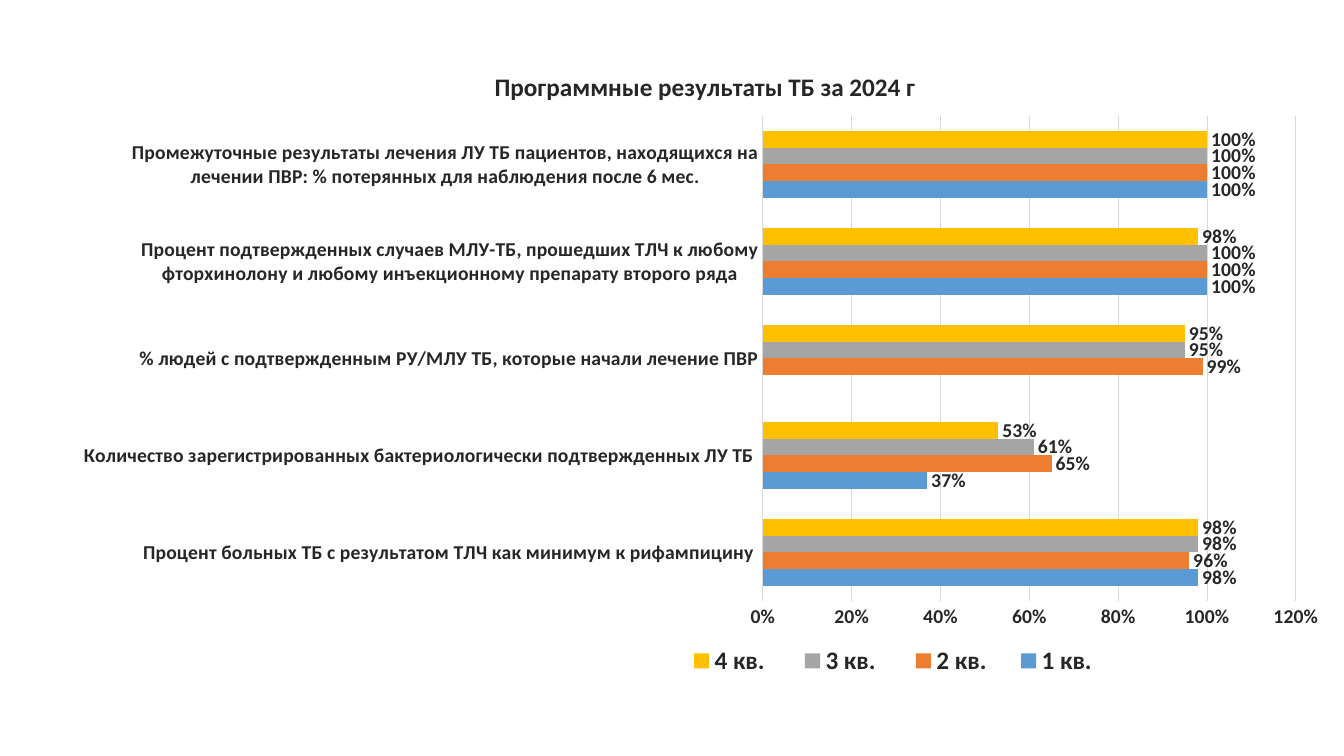
import pptx
import pptx.util
import pptx.dml.color
import pptx.chart.data
import pptx.enum.chart
import pptx.oxml

PX = 914400 / 100.8
FONT = "Calibri"
DARK = "262626"
GRID = "D9D9D9"
TITLE = "Программные результаты ТБ за 2024 г"
CATEGORIES = [
    "Процент больных ТБ с результатом ТЛЧ как минимум к рифампицину ",
    "Количество зарегистрированных бактериологически подтвержденных ЛУ ТБ ",
    "% людей с подтвержденным РУ/МЛУ ТБ, которые начали лечение ПВР",
    "Процент подтвержденных случаев МЛУ-ТБ, прошедших ТЛЧ к любому "
    "фторхинолону и любому инъекционному препарату второго ряда",
    "Промежуточные результаты лечения ЛУ ТБ пациентов, находящихся на "
    "лечении ПВР: % потерянных для наблюдения после 6 мес.",
]
QUARTERS = [
    ("1 кв.", "5B9BD5", [0.98, 0.37, None, 1, 1]),
    ("2 кв.", "ED7D31", [0.96, 0.65, 0.99, 1, 1]),
    ("3 кв. ", "A5A5A5", [0.98, 0.61, 0.95, 1, 1]),
    ("4 кв. ", "FFC000", [0.98, 0.53, 0.95, 0.98, 1]),
]


def px(n):
    return pptx.util.Emu(round(n * PX))


def color(value):
    return pptx.dml.color.RGBColor.from_string(value)


def set_font(font, size):
    font.name = FONT
    font.size = pptx.util.Pt(size)
    font.bold = True
    font.color.rgb = color(DARK)


def set_line(line, value):
    line.color.rgb = color(value)
    line.width = pptx.util.Pt(0.75)


def place(parent, after, box, part, inner=False):
    ns = pptx.oxml.ns.nsdecls("c")
    left, top, width, height = box
    x, y, w, h = part
    sizes = [("x", x / width), ("y", y / height)]
    if w:
        sizes += [("w", w / width), ("h", h / height)]
    target = '<c:layoutTarget val="inner"/>' if inner else ""
    modes = "".join(f'<c:{k}Mode val="edge"/>' for k in "xy")
    values = "".join(f'<c:{k} val="{v:.4f}"/>' for k, v in sizes)
    layout = pptx.oxml.parse_xml(
        f"<c:layout {ns}><c:manualLayout>{target}{modes}{values}"
        "</c:manualLayout></c:layout>")
    old = parent.find(pptx.oxml.ns.qn("c:layout"))
    if old is not None:
        parent.remove(old)
    if after:
        parent.find(pptx.oxml.ns.qn(after)).addnext(layout)
    else:
        parent.insert(0, layout)


def add_title(chart, box):
    chart.has_title = True
    title = chart.chart_title
    title.include_in_layout = False
    p = title.text_frame.paragraphs[0]
    p.text = TITLE
    set_font(p.font, 18)
    place(title._element, "c:tx", box, (432, 27, 0, 0))


def add_legend(chart, box):
    chart.has_legend = True
    legend = chart.legend
    legend.position = pptx.enum.chart.XL_LEGEND_POSITION.BOTTOM
    legend.include_in_layout = False
    set_font(legend.font, 18)
    place(legend._element, "c:legendPos", box, (610, 604, 450, 38))


def style_axes(chart):
    for axis in (chart.category_axis, chart.value_axis):
        axis.major_tick_mark = pptx.enum.chart.XL_TICK_MARK.NONE
        axis.minor_tick_mark = pptx.enum.chart.XL_TICK_MARK.NONE
        set_font(axis.tick_labels.font, 14)
    set_line(chart.category_axis.format.line, GRID)
    chart.category_axis.has_major_gridlines = False
    values = chart.value_axis
    values.format.line.fill.background()
    values.has_major_gridlines = True
    set_line(values.major_gridlines.format.line, GRID)
    values.minimum_scale, values.maximum_scale = 0, 1.2
    values.major_unit = 0.2
    values.tick_labels.number_format = "0%"
    values.tick_labels.number_format_is_linked = False


def style_bars(plot):
    plot.gap_width = 182
    plot.vary_by_categories = False
    for series, (name, fill, values) in zip(plot.series, QUARTERS):
        series.format.fill.solid()
        series.format.fill.fore_color.rgb = color(fill)
        labels = series.data_labels
        labels.show_value = True
        labels.position = pptx.enum.chart.XL_LABEL_POSITION.OUTSIDE_END
        labels.number_format = "0%"
        labels.number_format_is_linked = False
        set_font(labels.font, 14)


def add_results_chart(s, box):
    data = pptx.chart.data.CategoryChartData(number_format="0%")
    data.categories = CATEGORIES
    for name, fill, values in QUARTERS:
        data.add_series(name, values)
    chart = s.shapes.add_chart(
        pptx.enum.chart.XL_CHART_TYPE.BAR_CLUSTERED,
        *[px(n) for n in box], data).chart
    set_font(chart.font, 14)
    add_title(chart, box)
    add_legend(chart, box)
    style_axes(chart)
    style_bars(chart.plots[0])
    plot_area = chart._chartSpace.chart.plotArea
    place(plot_area, None, box, (705, 78, 533, 485), inner=True)


def main():
    prs = pptx.Presentation()
    prs.slide_width, prs.slide_height = px(1344), px(756)
    s = prs.slides.add_slide(prs.slide_layouts[6])
    add_results_chart(s, (58, 38, 1285, 651))
    prs.save("out.pptx")


if __name__ == "__main__":
    main()
